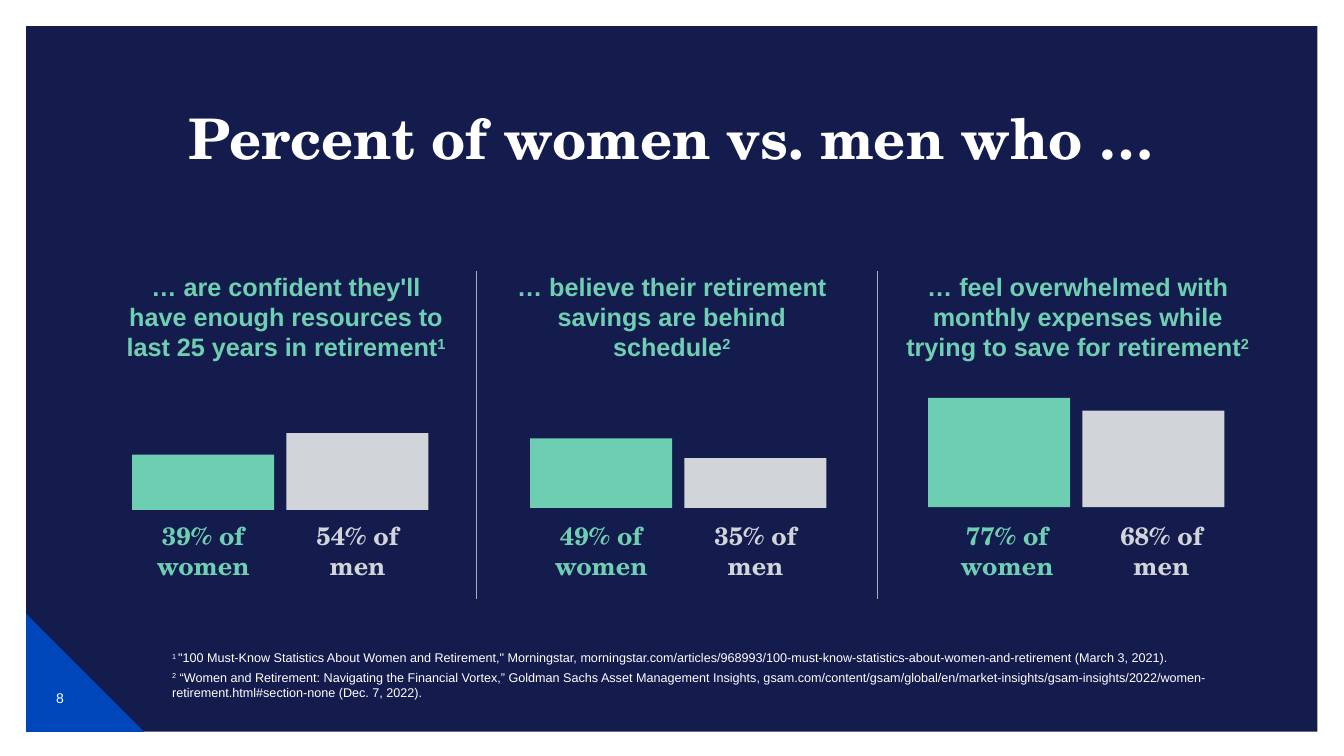
from collections import namedtuple

from lxml import etree
from pptx import Presentation
from pptx.dml.color import RGBColor
from pptx.enum.shapes import MSO_CONNECTOR, MSO_SHAPE
from pptx.enum.text import MSO_ANCHOR, MSO_AUTO_SIZE, PP_ALIGN
from pptx.oxml.ns import qn
from pptx.util import Cm, Pt

COLORS = {
    "navy": "141B4D",
    "blue": "0047BB",
    "white": "FFFFFF",
    "mint": "6ECFB2",
    "mint_bar": "6ECEB1",
    "gray": "D1D4D8",
    "divider": "ABAFB8",
}
SANS, SERIF = "Arial", "TeX Gyre Schola"

Box = namedtuple("Box", "left top width height")
Panel = namedtuple("Panel", "box question note women men baseline label_shift")

BAR_WIDTH = 3.58  # also the height of a 100% bar
BAR_PITCH = 3.89
BARS_LEFT = 3.33
PANEL_PITCH = 10.03
LABEL_TOP = 13.11
DIVIDER_TOP, DIVIDER_BOTTOM = 6.83, 15.09

PANELS = [
    Panel(Box(3.07, 6.83, 8.28, 2.31),
          "… are confident they'll have enough resources to last 25 years in retirement",
          "1", 39, 54, 12.85, 0),
    Panel(Box(12.5, 6.83, 8.86, 2.31),
          "… believe their retirement savings are behind schedule",
          "2", 49, 35, 12.8, 0),
    Panel(Box(22.73, 6.83, 8.86, 2.31),
          "… feel overwhelmed with monthly expenses while trying to save for retirement",
          "2", 77, 68, 12.78, 0.2),
]
FOOTNOTES = [
    ("1 ", "\"100 Must-Know Statistics About Women and Retirement,\" Morningstar, "
           "morningstar.com/articles/968993/100-must-know-statistics-about-women-and-retirement "
           "(March 3, 2021)."),
    ("2", " “Women and Retirement: Navigating the Financial Vortex,” Goldman Sachs Asset "
          "Management Insights, gsam.com/content/gsam/global/en/market-insights/gsam-insights/"
          "2022/women-retirement.html#section-none (Dec. 7, 2022)."),
]


def color(name):
    return RGBColor.from_string(COLORS[name])


def lengths(box):
    return [Cm(value) for value in box]


def style(span, size, font, color_name, bold=False):
    span.font.size = Pt(size)
    span.font.name = font
    span.font.bold = bold
    span.font.color.rgb = color(color_name)


def superscript(span):
    span.font._element.set("baseline", "30000")


def add_block(page, kind, box, color_name):
    block = page.shapes.add_shape(kind, *lengths(box))
    block.shadow.inherit = False
    block.fill.solid()
    block.fill.fore_color.rgb = color(color_name)
    block.line.fill.background()


def add_text(page, box, margin=0):
    """Add a wrapping text box, with the same margin in cm on all sides."""
    frame = page.shapes.add_textbox(*lengths(box)).text_frame
    frame.word_wrap = True
    frame.margin_left = frame.margin_right = Cm(margin)
    frame.margin_top = frame.margin_bottom = Cm(margin / 2)
    return frame


def add_backdrop(page, box):
    add_block(page, MSO_SHAPE.RECTANGLE, box, "navy")
    corner = 2.97
    corner_top = box.top + box.height - corner
    add_block(page, MSO_SHAPE.RIGHT_TRIANGLE, Box(box.left, corner_top, corner, corner), "blue")
    frame = add_text(page, Box(box.left + 0.15, corner_top + 1.37, 1.4, 1.47))
    frame.vertical_anchor = MSO_ANCHOR.MIDDLE
    frame.text = "8"
    para = frame.paragraphs[0]
    para.alignment = PP_ALIGN.CENTER
    style(para.runs[0], 10, SANS, "white")


def set_title(page, box):
    title = page.shapes.title
    title.left, title.top, title.width, title.height = lengths(box)
    frame = title.text_frame
    frame.text = "Percent of women vs. men who …"
    frame.auto_size = MSO_AUTO_SIZE.NONE
    frame.vertical_anchor = MSO_ANCHOR.TOP
    frame.margin_left = frame.margin_right = 0
    para = frame.paragraphs[0]
    para.alignment = PP_ALIGN.CENTER
    para.line_spacing = 0.9
    style(para.runs[0], 40, SERIF, "white", bold=True)


def add_panel(page, panel, bars_left):
    """Add a question with a bar and a label for women and for men."""
    para = add_text(page, panel.box).paragraphs[0]
    para.text = panel.question
    para.alignment = PP_ALIGN.CENTER
    para.add_run().text = panel.note
    for span in para.runs:
        style(span, 18, SANS, "mint", bold=True)
    superscript(para.runs[1])

    groups = [("women", panel.women, "mint_bar", "mint"), ("men", panel.men, "gray", "gray")]
    for index, (group, percent, bar_color, text_color) in enumerate(groups):
        left = bars_left + index * BAR_PITCH
        height = BAR_WIDTH * percent / 100
        add_block(page, MSO_SHAPE.RECTANGLE,
                  Box(left, panel.baseline - height, BAR_WIDTH, height), bar_color)
        label = add_text(page, Box(left + panel.label_shift, LABEL_TOP, BAR_WIDTH, 1.55))
        label.text = f"{percent}% of {group}"
        para = label.paragraphs[0]
        para.alignment = PP_ALIGN.CENTER
        style(para.runs[0], 18, SERIF, text_color, bold=True)


def add_divider(page, left):
    divider = page.shapes.add_connector(
        MSO_CONNECTOR.STRAIGHT, Cm(left), Cm(DIVIDER_TOP), Cm(left), Cm(DIVIDER_BOTTOM))
    divider.line.color.rgb = color("divider")
    divider.line.width = Pt(1)
    etree.SubElement(divider._element.spPr, qn("a:effectLst"))


def add_footnotes(page, box):
    frame = add_text(page, box, margin=0.25)
    for index, (mark, source) in enumerate(FOOTNOTES):
        para = frame.add_paragraph() if index else frame.paragraphs[0]
        para.text = mark
        para.add_run().text = source
        para.space_before = Pt(3 if index else 0)
        for span in para.runs:
            style(span, 9, SANS, "white")
        superscript(para.runs[0])


def main():
    deck = Presentation()
    deck.slide_width, deck.slide_height = Cm(33.87), Cm(19.05)
    page = deck.slides.add_slide(deck.slide_layouts[5])
    add_backdrop(page, Box(0.66, 0.66, 32.54, 17.78))
    # The title placeholder comes first in the layout, so lift it above the backdrop.
    page.shapes._spTree.append(page.shapes.title._element)
    set_title(page, Box(2.41, 2.67, 29.03, 2.54))
    for index, panel in enumerate(PANELS):
        add_panel(page, panel, BARS_LEFT + index * PANEL_PITCH)
    for left in (12.01, 22.12):
        add_divider(page, left)
    add_footnotes(page, Box(4.09, 16.26, 26.75, 1.52))
    deck.save("out.pptx")


if __name__ == "__main__":
    main()
